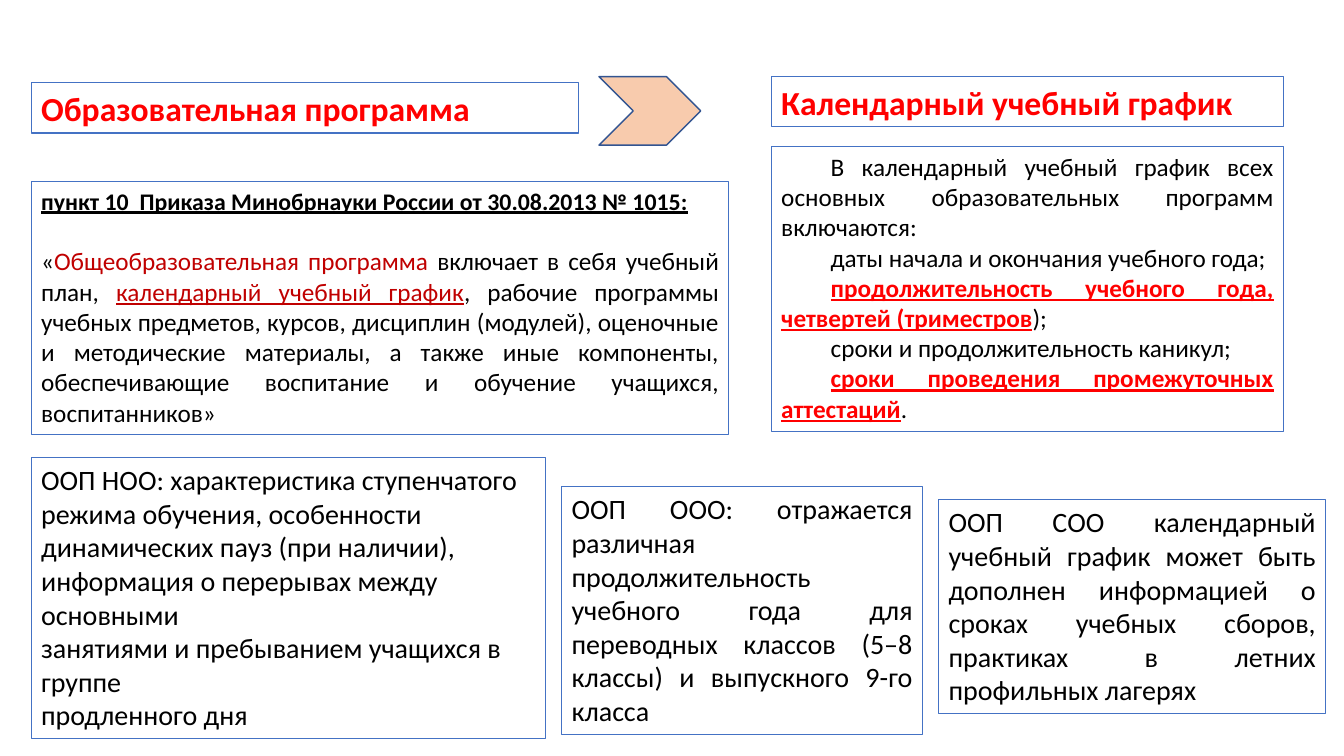
from pptx import Presentation
from pptx.dml.color import RGBColor
from pptx.enum.shapes import MSO_SHAPE as SHAPE
from pptx.enum.text import MSO_ANCHOR as ANCHOR, MSO_AUTO_SIZE as AUTO, PP_ALIGN as ALIGN
from pptx.util import Inches, Pt

BLACK, RED, DARK_RED = "000000", "FF0000", "C00000"
BLUE, NAVY, PEACH = "4472C4", "325491", "F8CBAD"

# Run styles: colour and font attributes
STYLES = {
    "plain": (BLACK, {}),
    "heading": (RED, {"bold": True}),
    "source": (BLACK, {"bold": True, "underline": True, "size": Pt(17)}),
    "term": (DARK_RED, {}),
    "term_line": (DARK_RED, {"underline": True}),
    "key": (RED, {"bold": True, "underline": True}),
}

LEFT, RIGHT, TOP = 0.31, 7.65, 0.76
RIGHT_W = 5.08
CHEVRON = (5.94, TOP, 1.01, 0.68)

JUSTIFY = {"alignment": ALIGN.JUSTIFY}

# Each box: position, text size, paragraph format, first-line indent,
# paragraphs made of (text, style) runs
BOXES = [
    ((LEFT, 0.82, 5.43, 0.5), 24, {}, 0,
     [[("Образовательная программа", "heading")]]),
    ((RIGHT, TOP, RIGHT_W, 0.5), 24, {}, 0,
     [[("Календарный учебный график", "heading")]]),
    ((LEFT, 1.8, 6.92, 2.51), 18, JUSTIFY, 0, [
        [("пункт 10  Приказа Минобрнауки России от 30.08.2013 № 1015:", "source")],
        [("«", "plain"),
         ("Общеобразовательная программа ", "term"),
         ("включает в себя учебный план, ", "plain"),
         ("календарный учебный график", "term_line"),
         (", рабочие программы учебных предметов, курсов, дисциплин (модулей), "
          "оценочные и методические материалы, а также иные компоненты, "
          "обеспечивающие воспитание и обучение учащихся, воспитанников»", "plain")],
    ]),
    ((RIGHT, 1.45, RIGHT_W, 2.83), 18, JUSTIFY, 0.49, [
        [("В календарный учебный график всех основных образовательных "
          "программ включаются:", "plain")],
        [("даты начала и окончания учебного года;", "plain")],
        [("продолжительность учебного года, четвертей (триместров", "key"),
         (");", "plain")],
        [("сроки и продолжительность каникул;", "plain")],
        [("сроки проведения промежуточных аттестаций", "key"), (".", "plain")],
    ]),
    ((LEFT, 4.54, 5.1, 2.79), 20, {}, 0, [
        [(line, "plain")] for line in (
            "ООП НОО: характеристика ступенчатого",
            "режима обучения, особенности",
            "динамических пауз (при наличии),",
            "информация о перерывах между основными",
            "занятиями и пребыванием учащихся в группе",
            "продленного дня",
        )
    ]),
    ((5.57, 4.83, 3.58, 2.46), 20, JUSTIFY, 0, [
        [("ООП ООО: отражается различная продолжительность учебного года для "
          "переводных классов (5–8 классы) и выпускного 9-го класса", "plain")],
    ]),
    ((9.31, 4.96, 3.84, 2.12), 20, JUSTIFY, 0, [
        [("ООП СОО календарный учебный график может быть дополнен информацией о "
          "сроках учебных сборов, практиках в летних профильных лагерях", "plain")],
    ]),
]


def rgb(color):
    return RGBColor.from_string(color)


def set_all(target, values):
    for name, value in values.items():
        setattr(target, name, value)


def outline(sp, color, width):
    sp.line.color.rgb = rgb(color)
    sp.line.width = Pt(width)


def add_run(p, text, style, size):
    color, extra = STYLES[style]
    r = p.add_run()
    r.text = text
    set_all(r.font, {"name": "Calibri", "size": Pt(size), **extra})
    r.font.color.rgb = rgb(color)


def add_box(slide, place, size, para_format, indent, paragraphs):
    sp = slide.shapes.add_textbox(*map(Inches, place))
    outline(sp, BLUE, 0.75)
    tf = sp.text_frame
    set_all(tf, {"word_wrap": True, "auto_size": AUTO.SHAPE_TO_FIT_TEXT,
                 "vertical_anchor": ANCHOR.TOP})
    for i, runs in enumerate(paragraphs):
        p = tf.paragraphs[0] if i == 0 else tf.add_paragraph()
        set_all(p, para_format)
        if indent:
            p._p.get_or_add_pPr().set("indent", str(Inches(indent)))
        for text, style in runs:
            add_run(p, text, style, size)
            if style == "source":
                p.space_after = Pt(22)


def add_chevron(slide):
    sp = slide.shapes.add_shape(SHAPE.CHEVRON, *map(Inches, CHEVRON))
    sp.shadow.inherit = False
    sp.fill.solid()
    sp.fill.fore_color.rgb = rgb(PEACH)
    outline(sp, NAVY, 1)


def main():
    prs = Presentation()
    set_all(prs, {"slide_width": Inches(13.33), "slide_height": Inches(7.5)})
    slide = prs.slides.add_slide(prs.slide_layouts.get_by_name("Blank"))
    for box in BOXES:
        add_box(slide, *box)
    add_chevron(slide)
    prs.save("out.pptx")


if __name__ == "__main__":
    main()
